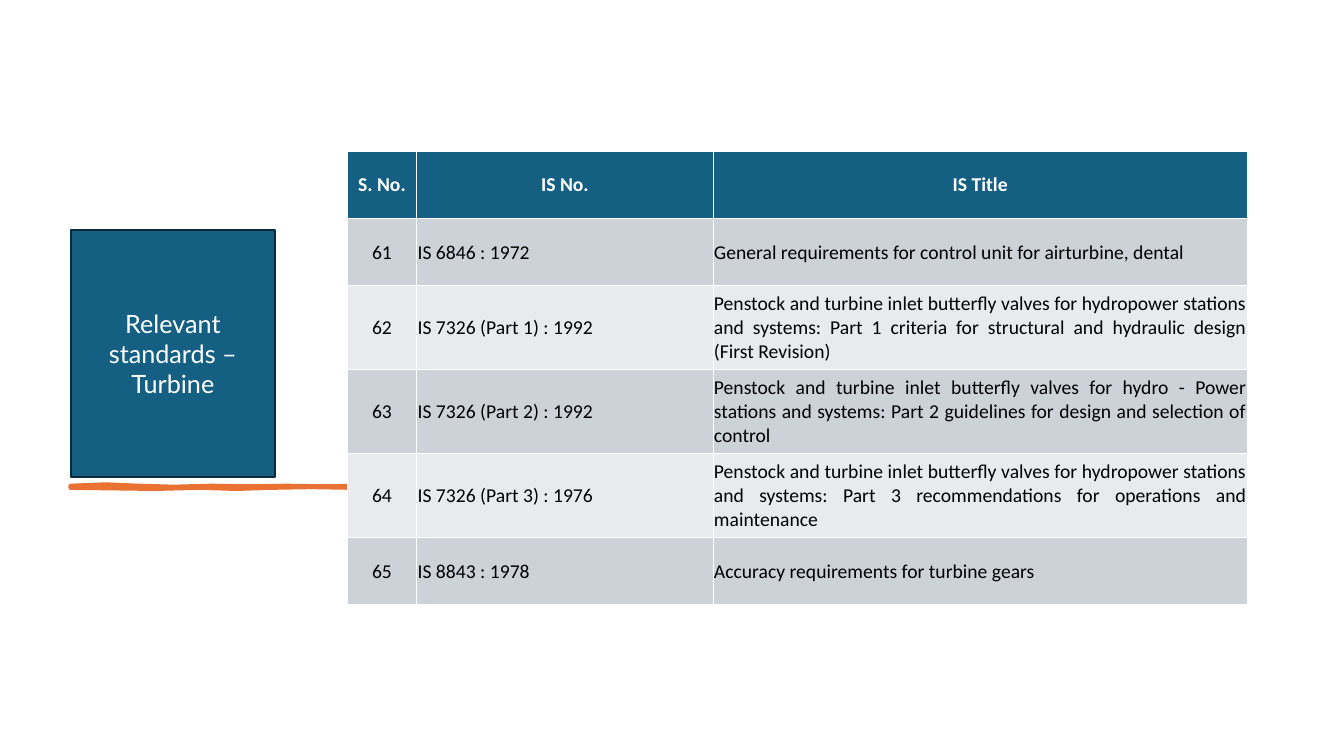
from dataclasses import dataclass

import lxml.etree
import pptx
import pptx.dml.color
import pptx.enum.text
import pptx.oxml.ns
import pptx.util

Pt = pptx.util.Pt
Align = pptx.enum.text.PP_ALIGN
Anchor = pptx.enum.text.MSO_ANCHOR


@dataclass(frozen=True)
class Theme:
    teal: str = "156082"
    outline: str = "092A39"
    orange: str = "E97132"
    white: str = "FFFFFF"
    black: str = "000000"
    bands: tuple = ("CCD2D8", "E8EAED")
    title_font: str = "Lato"
    title_size: int = 18
    table_font: str = "Calibri"
    table_size: int = 14


THEME = Theme()

HEADERS = ("S. No.", "IS No.", "IS Title")
STANDARDS = (
    ("61", "IS 6846 : 1972", "General requirements for control unit for airturbine, dental"),
    ("62", "IS 7326 (Part 1) : 1992",
     "Penstock and turbine inlet butterfly valves for hydropower stations and systems: "
     "Part 1 criteria for structural and hydraulic design (First Revision)"),
    ("63", "IS 7326 (Part 2) : 1992",
     "Penstock and turbine inlet butterfly valves for hydro - Power stations and systems: "
     "Part 2 guidelines for design and selection of control"),
    ("64", "IS 7326 (Part 3) : 1976",
     "Penstock and turbine inlet butterfly valves for hydropower stations and systems: "
     "Part 3 recommendations for operations and maintenance"),
    ("65", "IS 8843 : 1978", "Accuracy requirements for turbine gears"),
)
COLUMN_WIDTHS = (49.7, 211.7, 381.6)
COLUMN_ALIGNMENTS = (Align.CENTER, Align.LEFT, Align.JUSTIFY)
ROW_HEIGHTS = (48, 48, 60, 60, 60, 48)

BRUSH_EDGE = (
    (0, 0), (25, -1), (49, 0), (74, 0.7), (100, 0), (128, 0.4), (154, 0),
    (181, 0.4), (208, 0), (232, 0.2), (256.3, 0),
    (256.3, 1.4), (232, 1.6), (200, 1.4), (172, 0.9), (144, 1.4),
    (118, 2.2), (93, 1.4), (60, 2.2), (0, 1.4),
)


def color(value):
    return pptx.dml.color.RGBColor.from_string(value)


def paint(shape, fill, line, line_width):
    shape.fill.solid()
    shape.fill.fore_color.rgb = color(fill)
    shape.line.color.rgb = color(line)
    shape.line.width = Pt(line_width)


def format_text(paragraph, font_name, size, text_color, alignment, bold=False):
    paragraph.alignment = alignment
    for run in paragraph.runs:
        run.font.name = font_name
        run.font.size = Pt(size)
        run.font.bold = bold
        run.font.color.rgb = color(text_color)


def add_brush_stroke(slide, left, top):
    points = [(Pt(left + x), Pt(top + y)) for x, y in BRUSH_EDGE]
    builder = slide.shapes.build_freeform(*points[0])
    builder.add_line_segments(points[1:], close=True)
    stroke = builder.convert_to_shape()
    stroke.shadow.inherit = False
    paint(stroke, THEME.orange, THEME.orange, 3)


def add_standards_table(slide, left, top):
    rows = (HEADERS,) + STANDARDS
    frame = slide.shapes.add_table(
        len(rows), len(HEADERS), Pt(left), Pt(top), Pt(sum(COLUMN_WIDTHS)), Pt(sum(ROW_HEIGHTS)))
    table = frame.table
    for column, width in zip(table.columns, COLUMN_WIDTHS):
        column.width = Pt(width)
    for row, height in zip(table.rows, ROW_HEIGHTS):
        row.height = Pt(height)
    for row_index, texts in enumerate(rows):
        header = row_index == 0
        fill = THEME.teal if header else THEME.bands[(row_index - 1) % 2]
        for column_index, text in enumerate(texts):
            cell = table.cell(row_index, column_index)
            cell.text_frame.text = text
            cell.vertical_anchor = Anchor.MIDDLE
            cell.margin_left = cell.margin_right = cell.margin_top = Pt(0.6)
            cell.margin_bottom = 0
            cell.fill.solid()
            cell.fill.fore_color.rgb = color(fill)
            format_text(
                cell.text_frame.paragraphs[0], THEME.table_font, THEME.table_size,
                THEME.white if header else THEME.black,
                Align.CENTER if header else COLUMN_ALIGNMENTS[column_index], header)


def place_title(slide, left, top, width, height):
    title = slide.shapes.title
    title.left, title.top, title.width, title.height = map(Pt, (left, top, width, height))
    qualify = pptx.oxml.ns.qn
    geometry = lxml.etree.SubElement(title.element.spPr, qualify("a:prstGeom"), prst="homePlate")
    lxml.etree.SubElement(geometry, qualify("a:avLst"))
    paint(title, THEME.teal, THEME.outline, 1.5)
    text_frame = title.text_frame
    text_frame.text = "Relevant standards – Turbine"
    text_frame.word_wrap = True
    text_frame.auto_size = pptx.enum.text.MSO_AUTO_SIZE.NONE
    text_frame.vertical_anchor = Anchor.MIDDLE
    format_text(
        text_frame.paragraphs[0], THEME.title_font, THEME.title_size, THEME.white, Align.CENTER)


def build_standards_slide(presentation):
    slide = presentation.slides.add_slide(presentation.slide_layouts.get_by_name("Title Only"))
    place_title(slide, 50.4, 164.2, 146.2, 176.4)
    add_brush_stroke(slide, 50.4, 347)
    add_standards_table(slide, 248, 108)


def main():
    presentation = pptx.Presentation()
    presentation.slide_width = Pt(960)
    presentation.slide_height = Pt(540)
    build_standards_slide(presentation)
    presentation.save("out.pptx")


if __name__ == "__main__":
    main()
